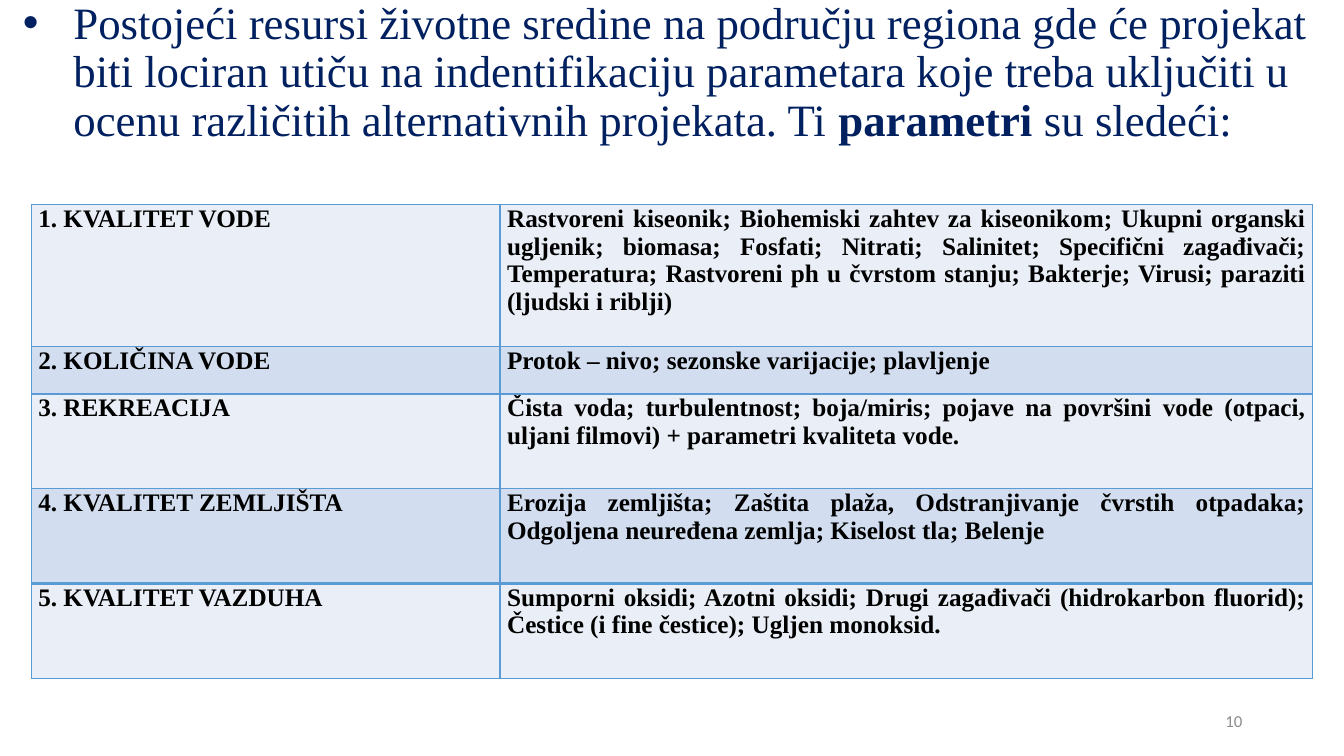
from lxml import etree
from pptx import Presentation
from pptx import util as u
from pptx.dml.color import RGBColor
from pptx.enum import text
from pptx.oxml import ns

NAVY = RGBColor(0x00, 0x20, 0x60)
BLACK = RGBColor(0x00, 0x00, 0x00)
GRAY = RGBColor(0x8C, 0x8C, 0x8C)
BORDER = RGBColor(0x5B, 0x9B, 0xD5)
BANDS = [RGBColor(0xEA, 0xEF, 0xF7), RGBColor(0xD2, 0xDE, 0xEF)]
SERIF = "Times New Roman"

INTRO = [
    ("Postojeći resursi životne sredine na području regiona gde će projekat "
     "biti lociran utiču na indentifikaciju parametara koje treba uključiti u "
     "ocenu različitih alternativnih projekata. Ti ", False),
    ("parametri ", True),
    ("su sledeći:", False),
]
COLUMN_WIDTHS = [4.65, 8.06]
PARAMETERS = [
    (1.41, "1. KVALITET VODE",
     "Rastvoreni kiseonik; Biohemiski zahtev za kiseonikom; Ukupni organski "
     "ugljenik; biomasa; Fosfati; Nitrati; Salinitet; Specifični zagađivači; "
     "Temperatura; Rastvoreni ph u čvrstom stanju; Bakterje; Virusi; paraziti "
     "(ljudski i riblji)"),
    (0.47, "2. KOLIČINA VODE",
     "Protok – nivo; sezonske varijacije; plavljenje"),
    (0.94, "3. REKREACIJA",
     "Čista voda; turbulentnost; boja/miris; pojave na površini vode (otpaci, "
     "uljani filmovi) + parametri kvaliteta vode."),
    (0.94, "4. KVALITET ZEMLJIŠTA",
     "Erozija zemljišta; Zaštita plaža, Odstranjivanje čvrstih otpadaka; "
     "Odgoljena neuređena zemlja; Kiselost tla; Belenje "),
    (0.94, "5. KVALITET VAZDUHA",
     "Sumporni oksidi; Azotni oksidi; Drugi zagađivači (hidrokarbon fluorid); "
     "Čestice (i fine čestice); Ugljen monoksid."),
]


def style_font(font, name, size, color):
    font.name = name
    font.size = u.Pt(size)
    font.color.rgb = color


def add_text_frame(page, left, top, width, height):
    box = page.shapes.add_textbox(
        u.Inches(left), u.Inches(top), u.Inches(width), u.Inches(height))
    frame = box.text_frame
    frame.word_wrap = True
    frame.vertical_anchor = text.MSO_ANCHOR.MIDDLE
    return frame


def add_bullet(para, indent):
    properties = para._p.get_or_add_pPr()
    properties.set("marL", str(u.Inches(indent)))
    properties.set("indent", str(-u.Inches(indent)))
    etree.SubElement(properties, ns.qn("a:buFont"), typeface="Arial")
    etree.SubElement(properties, ns.qn("a:buChar"), char="•")


def add_intro(page, left, top, width, height):
    para = add_text_frame(page, left, top, width, height).paragraphs[0]
    add_bullet(para, 0.5)
    para.line_spacing = 0.9
    style_font(para.font, SERIF, 32, NAVY)
    for words, bold in INTRO:
        span = para.add_run()
        span.text = words
        style_font(span.font, SERIF, 32, NAVY)
        span.font.bold = bold


def add_borders(cell, top_width):
    properties = cell._tc.get_or_add_tcPr()
    for side, width in (("L", 1), ("R", 1), ("T", top_width), ("B", 1)):
        line = etree.SubElement(
            properties, ns.qn(f"a:ln{side}"), w=str(u.Pt(width)))
        fill = etree.SubElement(line, ns.qn("a:solidFill"))
        etree.SubElement(fill, ns.qn("a:srgbClr"), val=str(BORDER))


def fill_cell(cell, words, band, top_width):
    cell.margin_left = cell.margin_right = u.Inches(0.07)
    cell.margin_top = cell.margin_bottom = 0
    add_borders(cell, top_width)
    cell.fill.solid()
    cell.fill.fore_color.rgb = band
    para = cell.text_frame.paragraphs[0]
    para.text = words
    para.alignment = text.PP_ALIGN.JUSTIFY
    style_font(para.font, SERIF, 18, BLACK)
    para.font.bold = True


def add_parameter_table(page, left, top, width, height):
    table = page.shapes.add_table(
        len(PARAMETERS), len(COLUMN_WIDTHS), u.Inches(left), u.Inches(top),
        u.Inches(width), u.Inches(height)).table
    table.first_row = False
    for column, column_width in zip(table.columns, COLUMN_WIDTHS):
        column.width = u.Inches(column_width)
    for index, (row_height, *entries) in enumerate(PARAMETERS):
        table.rows[index].height = u.Inches(row_height)
        top_width = 2 if index == len(PARAMETERS) - 1 else 1
        for cell, words in zip(table.rows[index].cells, entries):
            fill_cell(cell, words, BANDS[index % 2], top_width)


def add_page_number(page, left, top, width, height):
    para = add_text_frame(page, left, top, width, height).paragraphs[0]
    para.text = "10"
    para.alignment = text.PP_ALIGN.RIGHT
    style_font(para.font, "Calibri", 12, GRAY)


def main():
    deck = Presentation()
    deck.slide_width = u.Inches(13.33)
    deck.slide_height = u.Inches(7.5)
    page = deck.slides.add_slide(deck.slide_layouts[6])
    add_intro(page, 0.13, 0, 13.06, 1.45)
    add_parameter_table(page, 0.31, 2.03, 12.71, 4.71)
    add_page_number(page, 9.42, 6.95, 3, 0.4)
    deck.save("out.pptx")


if __name__ == "__main__":
    main()
